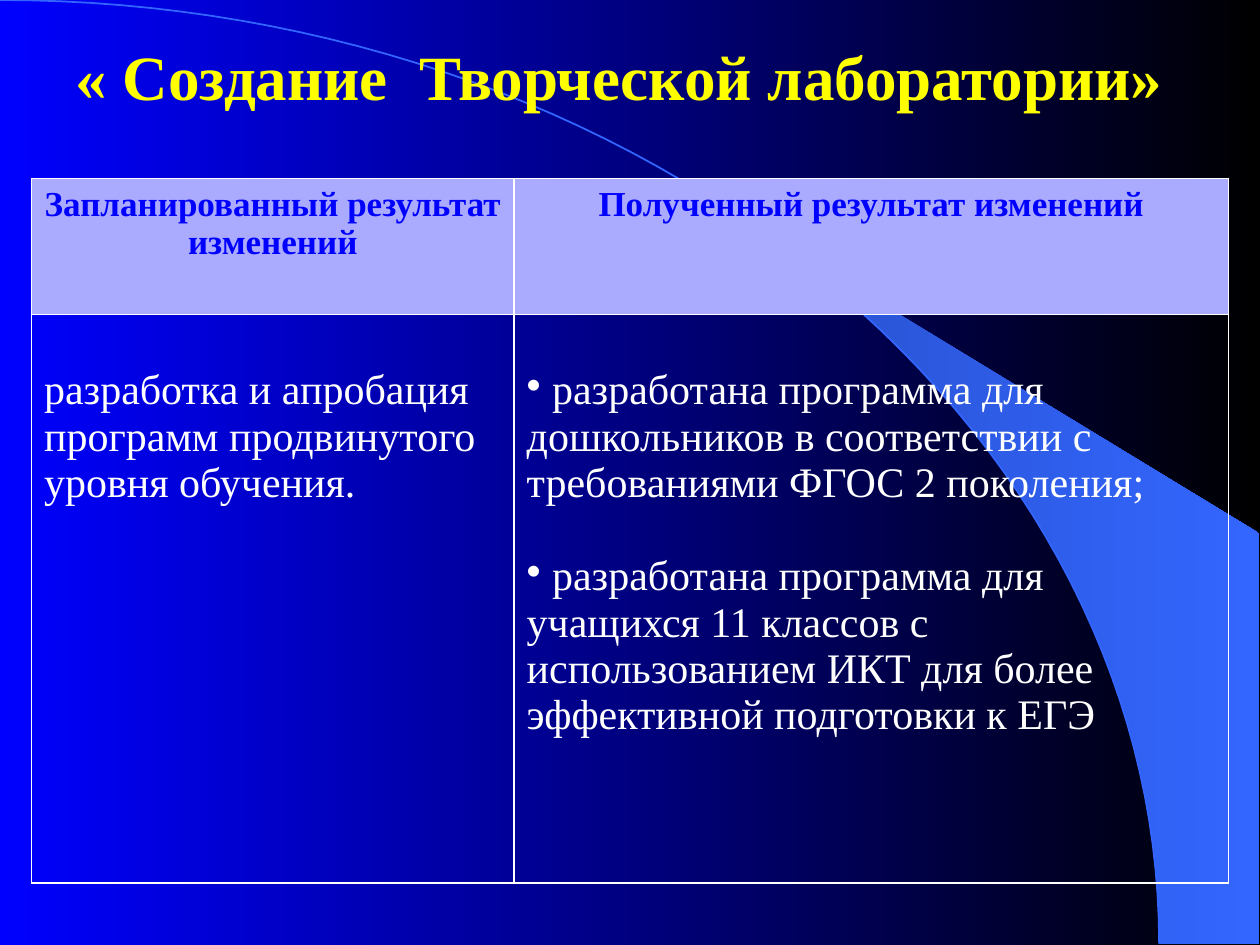
import math

from lxml import etree
from pptx import Presentation
from pptx import util as u
from pptx.dml import color
from pptx.enum import text
from pptx.oxml import ns

WIDE, HIGH = 720, 540
ARC_X, ARC_Y = 662.4, 539.3
EDGE = 719.3
GAP = 26.6  # one line of body text

HEADS = ["Запланированный результат изменений", "Полученный результат изменений"]
PLAN = ["разработка и апробация программ продвинутого уровня обучения."]
DONE = [
    " разработана программа для дошкольников в соответствии с требованиями ФГОС 2 поколения;",
    " разработана программа для учащихся 11 классов с использованием ИКТ"
    " для более эффективной подготовки к ЕГЭ",
]


def rgb(code):
    return color.RGBColor.from_string(code)


def sub(node, tag, **attrs):
    return etree.SubElement(node, ns.qn(tag), attrs)


def blend(fill, first, last):
    """Fill with a gradient running from left to right."""
    fill.gradient()
    fill.gradient_angle = 0
    for stop, code in zip(fill.gradient_stops, (first, last)):
        stop.color.rgb = rgb(code)


def arc(start):
    """Points of the quarter ellipse, from start degrees down to its right end."""
    steps = 60
    turns = [math.radians(start * (1 - i / steps)) for i in range(steps + 1)]
    return [(ARC_X * math.cos(t), ARC_Y * (1 - math.sin(t))) for t in turns]


class Deck:
    font = "Times New Roman"
    blue, white, yellow = "0000FF", "FFFFFF", "FFFF00"
    sky, shade, head = "3366FF", "2851CC", "AAAAFF"

    def __init__(self):
        self.file = Presentation()
        self.file.slide_width, self.file.slide_height = u.Pt(WIDE), u.Pt(HIGH)
        self.slide = self.file.slides.add_slide(self.file.slide_layouts[5])
        blend(self.slide.background.fill, self.blue, "000000")

    def style(self, para, size, code, bold=False, align=text.PP_ALIGN.LEFT):
        font = para.font
        font.name, font.size, font.bold = self.font, u.Pt(size), bold
        font.color.rgb = rgb(code)
        para.alignment = align

    def outline(self, points, close):
        spots = [(u.Pt(x), u.Pt(y)) for x, y in points]
        pen = self.slide.shapes.build_freeform(*spots[0])
        pen.add_line_segments(spots[1:], close=close)
        shape = pen.convert_to_shape()
        shape.shadow.inherit = False
        return shape

    def curve(self):
        shape = self.outline(arc(90), False)
        shape.fill.background()
        shape.line.color.rgb = rgb(self.sky)
        shape.line.width = u.Pt(1)

    def wedge(self):
        start = math.degrees(math.acos(0.64))
        corners = [(EDGE, ARC_Y), (EDGE, 304.6)]
        shape = self.outline(arc(start) + corners, True)
        blend(shape.fill, self.shade, self.sky)
        shape.line.fill.background()

    def title(self, words):
        box = self.slide.shapes.title
        box.left, box.top = u.Pt(36), u.Pt(18)
        box.width, box.height = u.Pt(642), u.Pt(51)
        frame = box.text_frame
        frame.text = words
        frame.word_wrap = True
        frame.auto_size = text.MSO_AUTO_SIZE.NONE
        frame.vertical_anchor = text.MSO_ANCHOR.TOP
        self.style(frame.paragraphs[0], 36, self.yellow, True)
        self.slide.shapes.element.append(box.element)  # bring to front

    def border(self, cell):
        props = cell._tc.get_or_add_tcPr()
        for side in "LRTB":
            line = sub(props, f"a:ln{side}", w=str(u.Pt(1)))
            sub(sub(line, "a:solidFill"), "a:srgbClr", val=self.white)

    def bullet(self, para):
        props = para._p.get_or_add_pPr()
        props.set("marL", "0")
        props.set("indent", "0")
        dot = etree.Element(ns.qn("a:buChar"), char="•")
        props.find(ns.qn("a:defRPr")).addprevious(dot)

    def body(self, cell, lines, dots):
        """Put body lines in a cell, each with one line's gap above it."""
        cell.margin_top = u.Pt(3.6 + GAP)
        cell.text = "\n".join(lines)
        for i, para in enumerate(cell.text_frame.paragraphs):
            self.style(para, 24, self.white)
            if i:
                para.space_before = u.Pt(GAP)
            if dots:
                self.bullet(para)

    def table(self, heads, bodies):
        wides, highs = (275.8, 408.2), (77.8, 324.7)
        grid = self.slide.shapes.add_table(
            2, 2, u.Pt(18), u.Pt(102), u.Pt(sum(wides)), u.Pt(sum(highs))
        ).table
        grid.first_row = grid.horz_banding = False
        for row, high in zip(grid.rows, highs):
            row.height = u.Pt(high)
        for i, wide in enumerate(wides):
            grid.columns[i].width = u.Pt(wide)
            top, low = grid.cell(0, i), grid.cell(1, i)
            self.border(top)
            self.border(low)
            top.fill.solid()
            top.fill.fore_color.rgb = rgb(self.head)
            low.fill.background()
            top.text = heads[i]
            para = top.text_frame.paragraphs[0]
            self.style(para, 20, self.blue, True, text.PP_ALIGN.CENTER)
            self.body(low, bodies[i], dots=i == 1)


def main():
    deck = Deck()
    deck.wedge()
    deck.curve()
    deck.table(HEADS, [PLAN, DONE])
    deck.title("« Создание  Творческой лаборатории»")
    deck.file.save("out.pptx")


if __name__ == "__main__":
    main()
